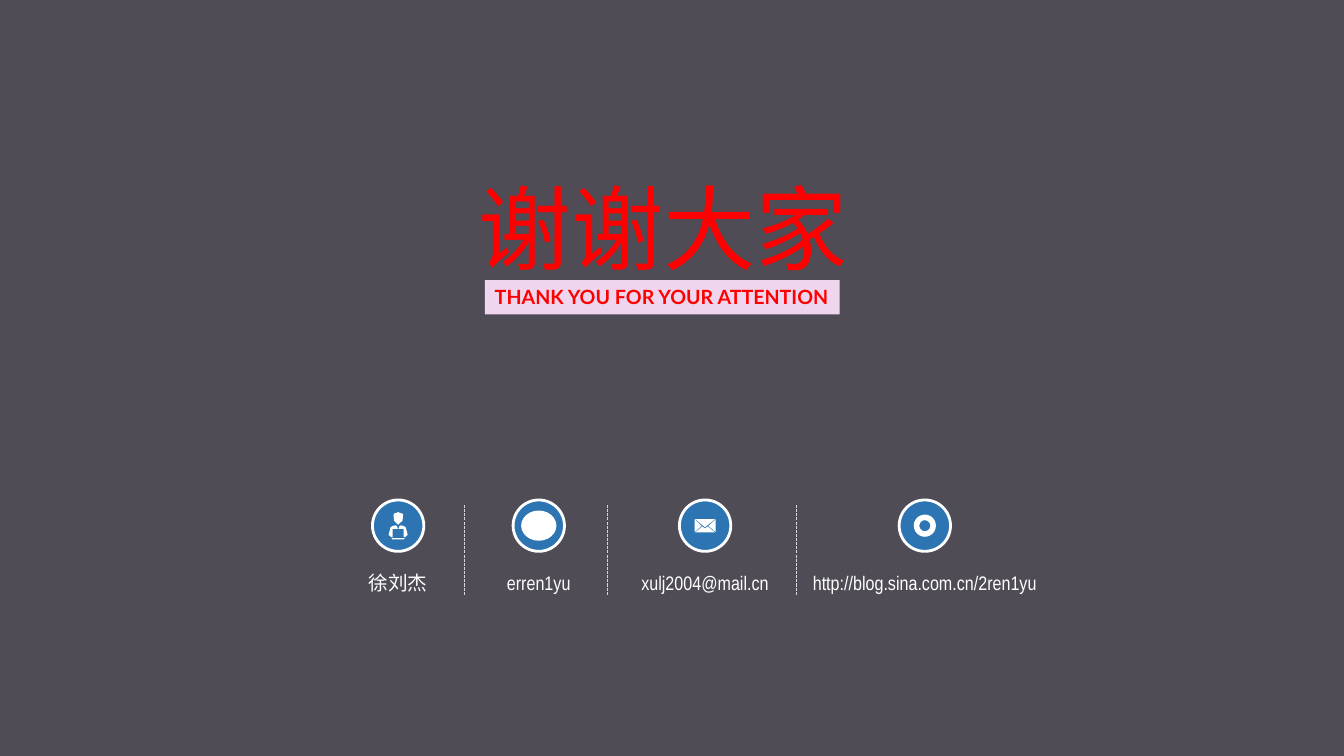
from lxml.etree import SubElement
from pptx import Presentation
from pptx.dml.color import RGBColor
from pptx.enum.dml import MSO_LINE
from pptx.enum.shapes import MSO_CONNECTOR, MSO_SHAPE
from pptx.enum.text import MSO_ANCHOR, MSO_AUTO_SIZE, PP_ALIGN
from pptx.oxml.ns import qn
from pptx.util import Emu, Pt

CELL = 76200
COLUMNS, ROWS = 160, 90
COLORS = {
    "background": "717579",
    "overlay": "1D1022",
    "red": "FF0000",
    "banner": "F0D5EF",
    "blue": "2C75B2",
    "white": "FFFFFF",
    "divider": "D7D7D7",
}
ASIAN_FONT = "Noto Sans CJK JP"
CIRCLE_ROW, CIRCLE_SIZE = 62.58, 6.12

HEAD = [(-55, -140), (0, -160), (60, -138), (52, -60), (0, -10), (-50, -60)]
LEFT_ARM = [(-30, -4), (-14, 8), (-4, 40), (-66, 40), (-66, 136),
            (-84, 136), (-114, 110), (-90, 20), (-66, 5)]
RIGHT_ARM = [(-x, y) for x, y in LEFT_ARM]
LAPTOP = [(-78, 148), (78, 148), (70, 164), (-70, 164)]
PERSON = [HEAD, LEFT_ARM, RIGHT_ARM, LAPTOP]

LEFT_FLAP = [(-124, -74), (-40, 4), (-124, 74)]
RIGHT_FLAP = [(-x, y) for x, y in LEFT_FLAP]
TOP_FLAP = [(-118, -78), (118, -78), (0, 20)]
BOTTOM_FLAP = [(-32, 10), (0, 34), (32, 10), (118, 80), (-118, 80)]
ENVELOPE = [LEFT_FLAP, RIGHT_FLAP, TOP_FLAP, BOTTOM_FLAP]

CONTACTS = [
    (47.4, 12, "徐刘杰"),
    (64.14, 12, "erren1yu"),
    (83.94, 18, "xulj2004@mail.cn"),
    (110.1, 29.76, "http://blog.sina.com.cn/2ren1yu"),
]
DIVIDERS = [55.32, 72.36, 94.8]


def grid(*cells):
    return [Emu(round(cell * CELL)) for cell in cells]


def color(name):
    return RGBColor.from_string(COLORS[name])


def add_span(box, text, size, font, color_name, bold=False, align=PP_ALIGN.LEFT):
    para = box.text_frame.paragraphs[0]
    para.alignment = align
    span = para.add_run()
    span.text = text
    span.font.size = Pt(size)
    span.font.name = font
    span.font.bold = bold
    span.font.color.rgb = color(color_name)
    SubElement(span.font._element, qn("a:ea"), typeface=ASIAN_FONT)


def add_block(page, kind, fill, *cells):
    block = page.shapes.add_shape(kind, *grid(*cells))
    block.shadow.inherit = False
    block.fill.solid()
    block.fill.fore_color.rgb = color(fill)
    block.line.fill.background()
    return block


def add_centered(page, kind, fill, column, width, height):
    return add_block(page, kind, fill, column - width / 2,
                     CIRCLE_ROW - height / 2, width, height)


def add_overlay(page):
    overlay = add_block(page, MSO_SHAPE.RECTANGLE, "overlay", 0, 0, COLUMNS, ROWS)
    tint = overlay.fill._xPr.find(".//" + qn("a:srgbClr"))
    SubElement(tint, qn("a:alpha"), val="40000")


def add_title(page):
    title = page.shapes.title
    title.left, title.top, title.width, title.height = grid(55.8, 19.8, 47.4, 14.52)
    title.text_frame.auto_size = MSO_AUTO_SIZE.NONE
    title.text_frame.vertical_anchor = MSO_ANCHOR.TOP
    add_span(title, "谢谢大家", 66, ASIAN_FONT, "red")


def add_banner(page):
    banner = add_block(page, MSO_SHAPE.RECTANGLE, "banner", 57.72, 33.36, 42.24, 4.08)
    banner.text_frame.word_wrap = False
    banner.text_frame.vertical_anchor = MSO_ANCHOR.TOP
    add_span(banner, "THANK YOU FOR YOUR ATTENTION", 14, "Lato", "red", bold=True)


def add_contact(page, column, width, text):
    circle = add_centered(page, MSO_SHAPE.OVAL, "blue", column, CIRCLE_SIZE, CIRCLE_SIZE)
    circle.line.color.rgb = color("white")
    circle.line.width = Pt(2)
    label = page.shapes.add_textbox(*grid(column - width / 2, 67.44, width, 3.96))
    label.text_frame.word_wrap = False
    label.text_frame.vertical_anchor = MSO_ANCHOR.MIDDLE
    add_span(label, text, 14, "Arial Narrow", "white", align=PP_ALIGN.CENTER)


def add_glyph(page, column, outlines):
    builder = page.shapes.build_freeform(*outlines[0][0], scale=CELL / 100)
    for outline in outlines:
        builder.move_to(*outline[0])
        builder.add_line_segments(outline[1:], close=True)
    glyph = builder.convert_to_shape(*grid(column, CIRCLE_ROW))
    glyph.shadow.inherit = False
    glyph.fill.solid()
    glyph.fill.fore_color.rgb = color("white")
    glyph.line.fill.background()


def add_divider(page, column):
    divider = page.shapes.add_connector(
        MSO_CONNECTOR.STRAIGHT, *grid(column, 60.12, column, 70.92))
    divider.line.color.rgb = color("divider")
    divider.line.width = Pt(0.75)
    divider.line.dash_style = MSO_LINE.SQUARE_DOT
    SubElement(divider._element.spPr, qn("a:effectLst"))


def main():
    deck = Presentation()
    deck.slide_width, deck.slide_height = grid(COLUMNS, ROWS)
    page = deck.slides.add_slide(deck.slide_layouts[5])
    page.background.fill.solid()
    page.background.fill.fore_color.rgb = color("background")
    add_overlay(page)
    add_title(page)
    page.shapes._spTree.append(page.shapes.title._element)
    add_banner(page)
    for contact in CONTACTS:
        add_contact(page, *contact)
    person, chat, mail, web = [column for column, _, _ in CONTACTS]
    add_glyph(page, person, PERSON)
    add_centered(page, MSO_SHAPE.OVAL, "white", chat, 4.2, 3.6)
    add_glyph(page, mail, ENVELOPE)
    add_centered(page, MSO_SHAPE.DONUT, "white", web, 2.64, 2.64)
    for column in DIVIDERS:
        add_divider(page, column)
    deck.save("out.pptx")


if __name__ == "__main__":
    main()
